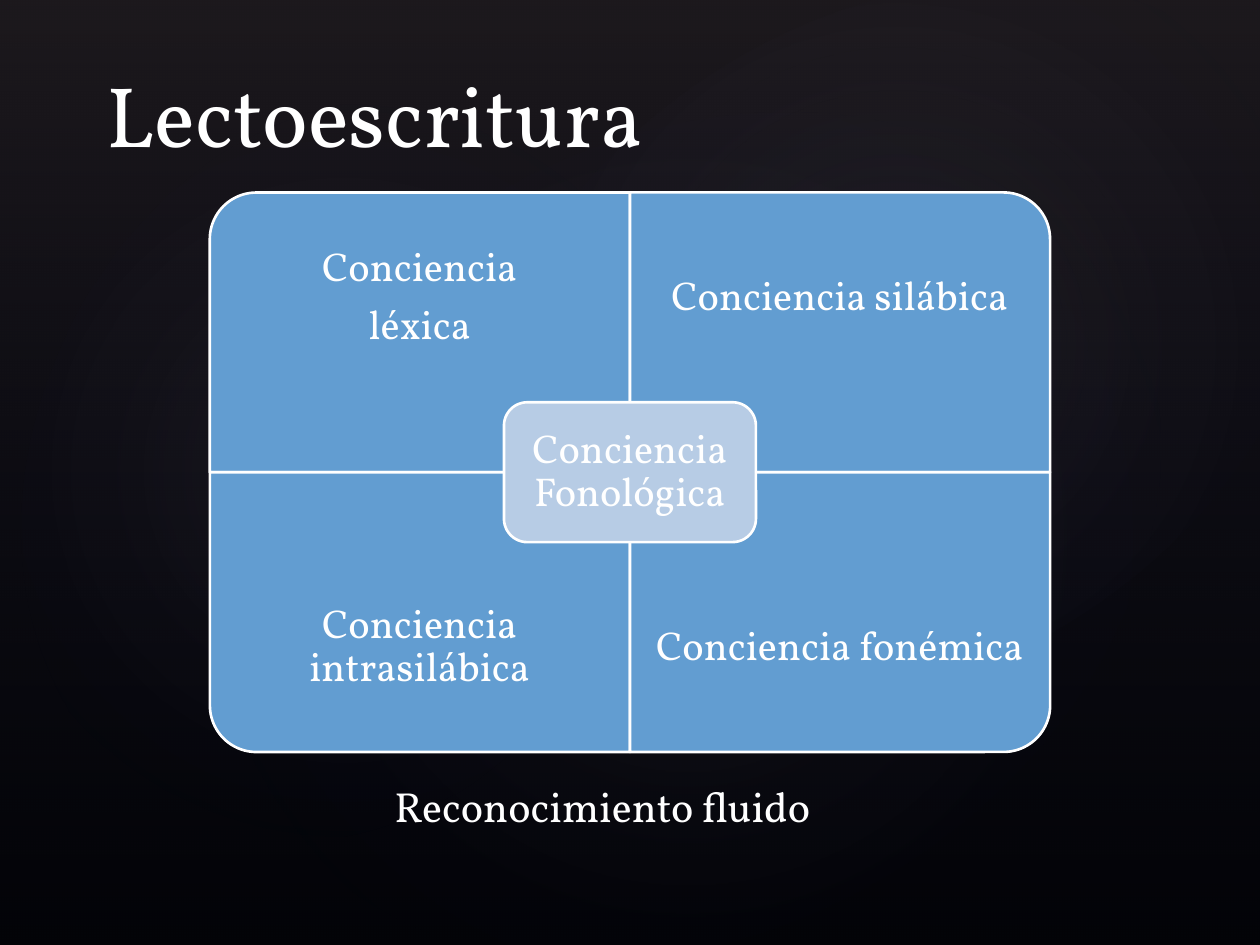
from dataclasses import dataclass

from lxml.etree import SubElement
from pptx import Presentation
from pptx.dml.color import RGBColor
from pptx.enum.shapes import MSO_SHAPE
from pptx.enum.text import MSO_ANCHOR, MSO_AUTO_SIZE, PP_ALIGN
from pptx.oxml.ns import qn
from pptx.util import Cm, Pt

BLACK = RGBColor(0x00, 0x00, 0x00)
WHITE = RGBColor(0xFF, 0xFF, 0xFF)
BLUE = RGBColor(0x62, 0x9D, 0xD1)
PALE = RGBColor(0xB7, 0xCC, 0xE5)
PLUM = RGBColor(0x50, 0x46, 0x52)
NAVY = RGBColor(0x24, 0x28, 0x52)
MIST = RGBColor(0xC4, 0xBC, 0xC6)

# Sizes in centimetres
WIDE, HIGH = 25.4, 19.05
MID_X, MID_Y = 12.7, 9.52
CELL_W, CELL_H = 8.47, 5.64
TEXT_H = CELL_H * 0.75
HUB_W, HUB_H = 5.08, 2.82


@dataclass
class Box:
    left: float
    top: float
    width: float
    height: float

    def lengths(self) -> tuple:
        return tuple(Cm(n) for n in (self.left, self.top, self.width, self.height))


@dataclass
class Glow:
    box: Box
    turn: float
    alpha: int


@dataclass
class Part:
    lines: list
    col: int
    row: int
    turn: int


GLOWS = [
    Glow(Box(3.81, 2.9, 20.12, 15.85), 328.7, 7),
    Glow(Box(-0.76, 3.25, 15.39, 12.45), 294.3, 8),
    Glow(Box(9.09, 0.33, 18.01, 13.21), 328.7, 8),
]
PARTS = [
    Part(["Conciencia", "léxica"], 0, 0, 270),
    Part(["Conciencia silábica"], 1, 0, 0),
    Part(["Conciencia intrasilábica"], 0, 1, 180),
    Part(["Conciencia fonémica"], 1, 1, 90),
]


def add_form(slide, kind, box: Box, turn: float = 0):
    form = slide.shapes.add_shape(kind, *box.lengths())
    form.shadow.inherit = False
    form.rotation = turn
    return form


def add_panel(slide, kind, box: Box, tint: RGBColor, turn: float = 0) -> None:
    panel = add_form(slide, kind, box, turn)
    panel.fill.solid()
    panel.fill.fore_color.rgb = tint
    panel.line.color.rgb = WHITE
    panel.line.width = Pt(1.5)


def add_fade(slide, kind, box: Box, stops: list, turn: float = 0, round_fade: bool = False) -> None:
    """Draw a borderless shape with stops of (place %, colour, alpha %)."""
    form = add_form(slide, kind, box, turn)
    form.line.fill.background()
    form.fill.background()
    old = form._element.spPr.find(qn("a:noFill"))
    fade = old.makeelement(qn("a:gradFill"), {"rotWithShape": "1"})
    old.getparent().replace(old, fade)
    group = SubElement(fade, qn("a:gsLst"))
    for place, tint, alpha in stops:
        stop = SubElement(group, qn("a:gs"), pos=str(place * 1000))
        shade = SubElement(stop, qn("a:srgbClr"), val=str(tint))
        SubElement(shade, qn("a:alpha"), val=str(alpha * 1000))
    if round_fade:
        route = SubElement(fade, qn("a:path"), path="circle")
        SubElement(route, qn("a:fillToRect"), l="50000", t="50000", r="50000", b="50000")
    else:
        SubElement(fade, qn("a:lin"), ang="5400000", scaled="0")


def add_text(slide, box: Box, lines: list, size: float, frame_style: dict, para_style: dict) -> None:
    frame = slide.shapes.add_textbox(*box.lengths()).text_frame
    for name, value in {"word_wrap": True, **frame_style}.items():
        setattr(frame, name, value)
    frame.text = "\n".join(lines)
    for para in frame.paragraphs:
        for name, value in para_style.items():
            setattr(para, name, value)
        font = para.runs[0].font
        for name, value in {"name": "Vollkorn", "size": Pt(size)}.items():
            setattr(font, name, value)
        font.color.rgb = WHITE


def add_label(slide, box: Box, lines: list, inset: float) -> None:
    sides = ("left", "top", "right", "bottom")
    frame_style = {f"margin_{side}": Cm(inset) for side in sides}
    frame_style["vertical_anchor"] = MSO_ANCHOR.MIDDLE
    para_style = {"alignment": PP_ALIGN.CENTER, "line_spacing": 0.9, "space_after": Pt(8)}
    add_text(slide, box, lines, 23, frame_style, para_style)


def add_part(slide, part: Part) -> None:
    left = MID_X + (part.col - 1) * CELL_W
    top = MID_Y + (part.row - 1) * CELL_H
    # A quarter turn swaps the sides about the same centre
    wide, high = (CELL_H, CELL_W) if part.turn % 180 else (CELL_W, CELL_H)
    box = Box(left + (CELL_W - wide) / 2, top + (CELL_H - high) / 2, wide, high)
    add_panel(slide, MSO_SHAPE.ROUND_1_RECTANGLE, box, BLUE, part.turn)
    # Labels keep to the outer three quarters of the cell
    shift = part.row * (CELL_H - TEXT_H)
    add_label(slide, Box(left, top + shift, CELL_W, TEXT_H), part.lines, 0.46)


def main() -> None:
    deck = Presentation()
    deck.slide_width, deck.slide_height = Cm(WIDE), Cm(HIGH)
    slide = deck.slides.add_slide(deck.slide_layouts[6])

    # Backdrop
    slide.background.fill.solid()
    slide.background.fill.fore_color.rgb = BLACK
    add_fade(slide, MSO_SHAPE.RECTANGLE, Box(0, 0, WIDE, HIGH), [(0, PLUM, 36), (100, NAVY, 10)])
    for glow in GLOWS:
        stops = [(0, MIST, glow.alpha), (58, NAVY, 0)]
        add_fade(slide, MSO_SHAPE.OVAL, glow.box, stops, glow.turn, True)

    # Title
    add_text(slide, Box(1.9, 0.91, 20.96, 2.54), ["Lectoescritura"], 49,
             {"vertical_anchor": MSO_ANCHOR.BOTTOM}, {})

    # Matrix with its hub
    for part in PARTS:
        add_part(slide, part)
    hub = Box(MID_X - HUB_W / 2, MID_Y - HUB_H / 2, HUB_W, HUB_H)
    add_panel(slide, MSO_SHAPE.ROUNDED_RECTANGLE, hub, PALE)
    pad = 0.14
    core = Box(hub.left + pad, hub.top + pad, HUB_W - 2 * pad, HUB_H - 2 * pad)
    add_label(slide, core, ["Conciencia Fonológica"], 0.25)

    # Caption
    add_text(slide, Box(7.7, 15.6, 10, 1.28), ["Reconocimiento fluido"], 24,
             {"auto_size": MSO_AUTO_SIZE.SHAPE_TO_FIT_TEXT}, {})

    deck.save("out.pptx")


if __name__ == "__main__":
    main()
